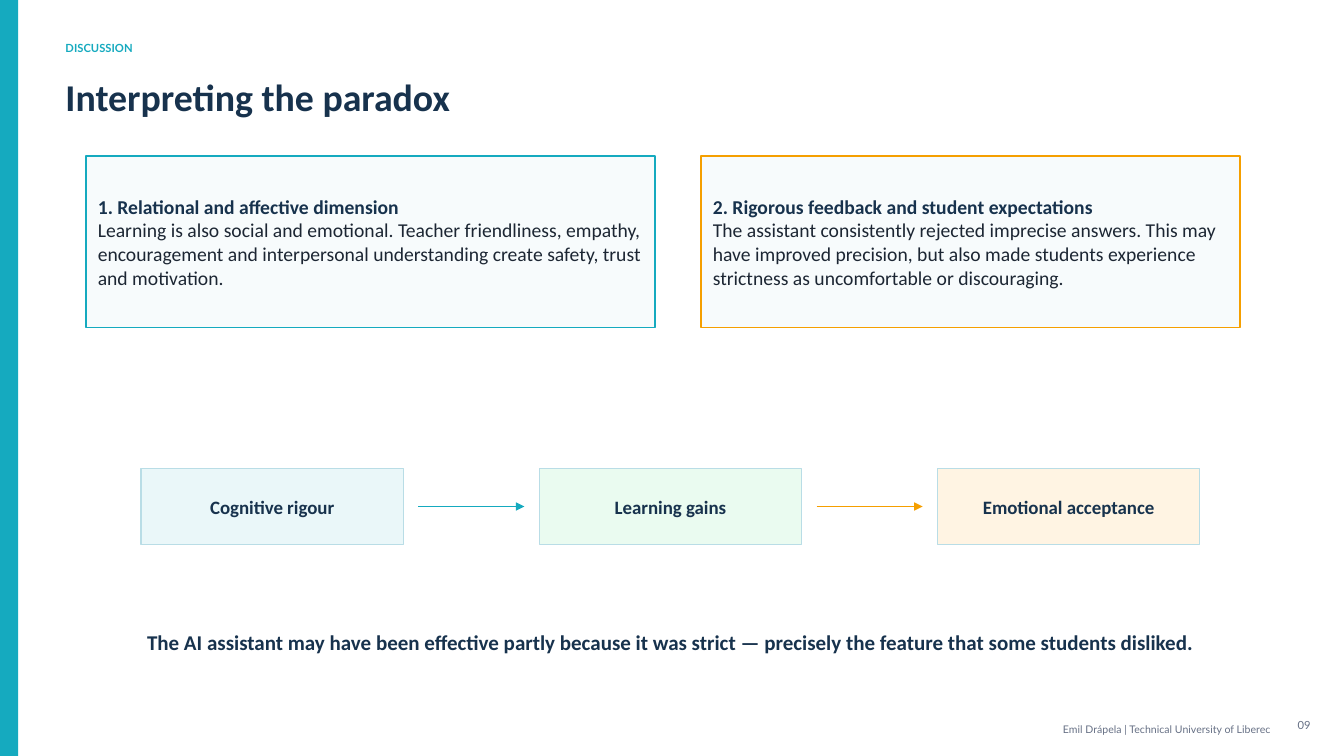
"""Build the discussion slide on interpreting the paradox."""
from dataclasses import dataclass

from lxml import etree
from pptx import Presentation
from pptx import util as u
from pptx.dml.color import RGBColor
from pptx.enum import shapes, text
from pptx.oxml import ns


@dataclass(frozen=True)
class Theme:
    """Colours, fonts and type sizes of the slide."""
    teal: str = "15AABF"
    amber: str = "F59F00"
    navy: str = "17324D"
    ink: str = "1C2633"
    grey: str = "667085"
    card: str = "F7FBFC"
    border: str = "B9DDE6"
    pale_teal: str = "EAF7F9"
    pale_green: str = "EAFBF0"
    pale_amber: str = "FFF4E3"
    white: str = "FFFFFF"
    body_font: str = "Calibri"
    label_font: str = "Lato"
    title: float = 27
    message: float = 15
    body: float = 14
    step: float = 13.5
    label: float = 8
    footer: float = 7.5
    card_line: float = 1.2
    step_line: float = 1


class SlideBuilder:
    """Draw styled elements on the current slide."""

    def __init__(self, deck, theme):
        """Add a blank page with a plain background."""
        self.theme = theme
        self.page = deck.slides.add_slide(deck.slide_layouts[6])
        fill = self.page.background.fill
        fill.solid()
        fill.fore_color.rgb = RGBColor.from_string(theme.white)

    def set_frame(self, shape, align, inset=0):
        """Prepare the text frame and return its first paragraph."""
        settings = {
            "word_wrap": True,
            "vertical_anchor": text.MSO_ANCHOR.MIDDLE,
            "margin_left": u.Inches(inset),
            "margin_right": u.Inches(inset),
            "margin_top": 0,
            "margin_bottom": 0,
        }
        for name, value in settings.items():
            setattr(shape.text_frame, name, value)
        para = shape.text_frame.paragraphs[0]
        para.alignment = align
        return para

    def add_span(self, para, words, size, colour, bold=True, font=None):
        """Append a formatted run to a paragraph."""
        span = para.add_run()
        span.text = words
        settings = {
            "name": font or self.theme.body_font,
            "size": u.Pt(size),
            "bold": bold,
        }
        for name, value in settings.items():
            setattr(span.font, name, value)
        span.font.color.rgb = RGBColor.from_string(colour)

    def add_text(self, words, place, size, colour, align=text.PP_ALIGN.LEFT,
                 bold=True, font=None):
        """Add a one-paragraph text box."""
        box = self.page.shapes.add_textbox(*map(u.Inches, place))
        para = self.set_frame(box, align)
        self.add_span(para, words, size, colour, bold, font)

    def add_box(self, place, fill, line=None, width=0):
        """Add a filled rectangle, outlined when a line colour is given."""
        box = self.page.shapes.add_shape(
            shapes.MSO_SHAPE.RECTANGLE, *map(u.Inches, place))
        box.shadow.inherit = False
        box.fill.solid()
        box.fill.fore_color.rgb = RGBColor.from_string(fill)
        if line:
            box.line.color.rgb = RGBColor.from_string(line)
            box.line.width = u.Pt(width)
        else:
            box.line.fill.background()
        return box

    def add_card(self, heading, body, place, line):
        """Add an outlined card with a heading above its body."""
        theme = self.theme
        box = self.add_box(place, theme.card, line, theme.card_line)
        para = self.set_frame(box, text.PP_ALIGN.LEFT, 0.12)
        self.add_span(para, heading, theme.body, theme.navy)
        para.add_line_break()
        self.add_span(para, body, theme.body, theme.ink, bold=False)

    def add_step(self, words, place, fill):
        """Add one labelled step of the flow."""
        theme = self.theme
        box = self.add_box(place, fill, theme.border, theme.step_line)
        para = self.set_frame(box, text.PP_ALIGN.CENTER)
        self.add_span(para, words, theme.step, theme.navy)

    def add_arrow(self, left, right, height, colour):
        """Add a horizontal arrow pointing right."""
        arrow = self.page.shapes.add_connector(
            shapes.MSO_CONNECTOR.STRAIGHT,
            *map(u.Inches, (left, height, right, height)))
        arrow.line.color.rgb = RGBColor.from_string(colour)
        arrow.line.width = u.Pt(self.theme.card_line)
        etree.SubElement(arrow.line._get_or_add_ln(), ns.qn("a:tailEnd"),
                         type="triangle")
        etree.SubElement(arrow._element.spPr, ns.qn("a:effectLst"))


def main():
    """Compose and save the slide."""
    deck = Presentation()
    deck.slide_width, deck.slide_height = u.Inches(13.33), u.Inches(7.5)
    theme = Theme()
    slide = SlideBuilder(deck, theme)
    right = text.PP_ALIGN.RIGHT

    slide.add_box((0, 0, 0.18, 7.5), theme.teal)
    slide.add_text("DISCUSSION", (0.65, 0.35, 2.8, 0.25), theme.label,
                   theme.teal, font=theme.label_font)
    slide.add_text("Interpreting the paradox", (0.65, 0.68, 8.7, 0.55),
                   theme.title, theme.navy)
    slide.add_text("Emil Drápela | Technical University of Liberec",
                   (8.75, 7.12, 3.85, 0.22), theme.footer, theme.grey,
                   right, False, theme.label_font)

    slide.add_card(
        "1. Relational and affective dimension",
        "Learning is also social and emotional. Teacher friendliness, "
        "empathy, encouragement and interpersonal understanding create "
        "safety, trust and motivation.",
        (0.85, 1.55, 5.65, 1.7), theme.teal)
    slide.add_card(
        "2. Rigorous feedback and student expectations",
        "The assistant consistently rejected imprecise answers. This may "
        "have improved precision, but also made students experience "
        "strictness as uncomfortable or discouraging.",
        (6.95, 1.55, 5.35, 1.7), theme.amber)

    first, top, width, height, pitch, gap = 1.4, 4.65, 2.6, 0.75, 3.95, 0.15
    steps = (("Cognitive rigour", theme.pale_teal),
             ("Learning gains", theme.pale_green),
             ("Emotional acceptance", theme.pale_amber))
    for index, (words, fill) in enumerate(steps):
        slide.add_step(words, (first + index * pitch, top, width, height), fill)
    for index, colour in enumerate((theme.teal, theme.amber)):
        left = first + index * pitch
        slide.add_arrow(left + width + gap, left + pitch - gap,
                        top + height / 2, colour)

    slide.add_text(
        "The AI assistant may have been effective partly because it was "
        "strict — precisely the feature that some students disliked.",
        (1.2, 6.15, 10.9, 0.45), theme.message, theme.navy,
        text.PP_ALIGN.CENTER)
    slide.add_text("09", (12.65, 7.08, 0.35, 0.22), theme.label, theme.grey,
                   right, False, theme.label_font)
    deck.save("out.pptx")


if __name__ == "__main__":
    main()
